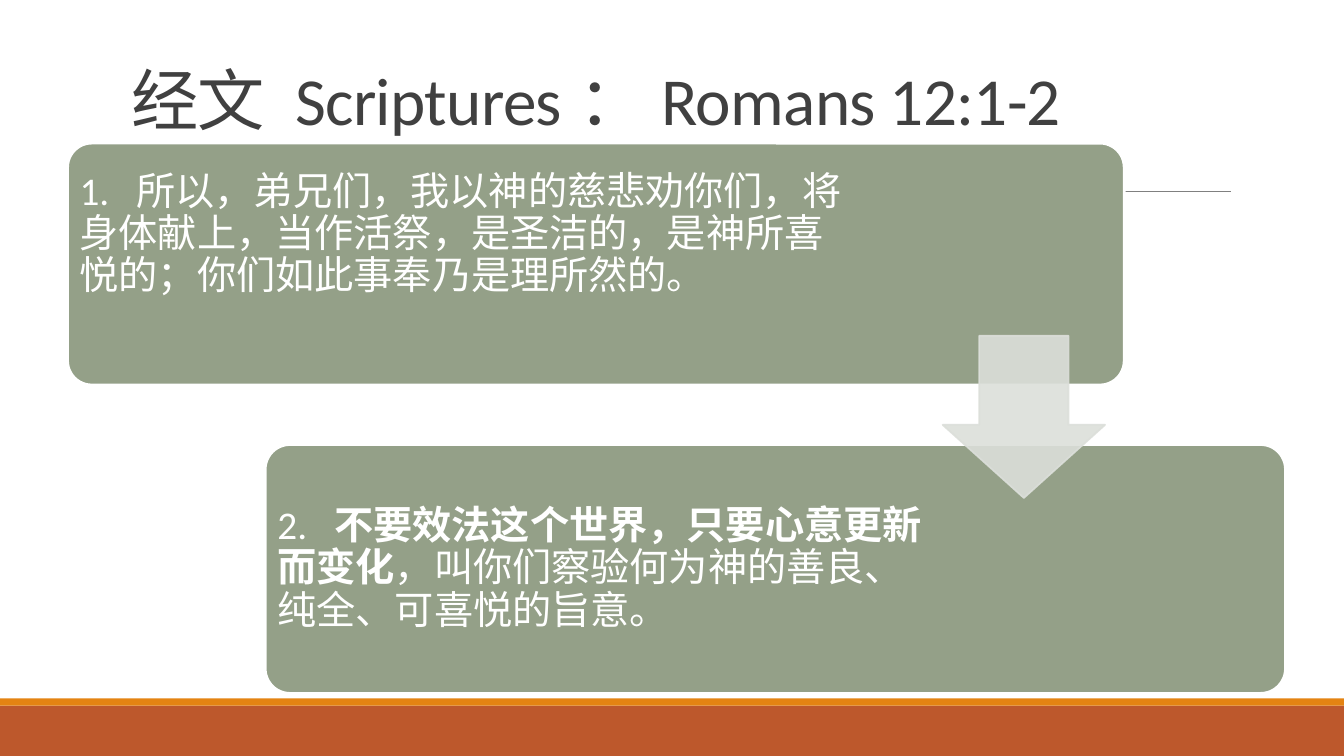
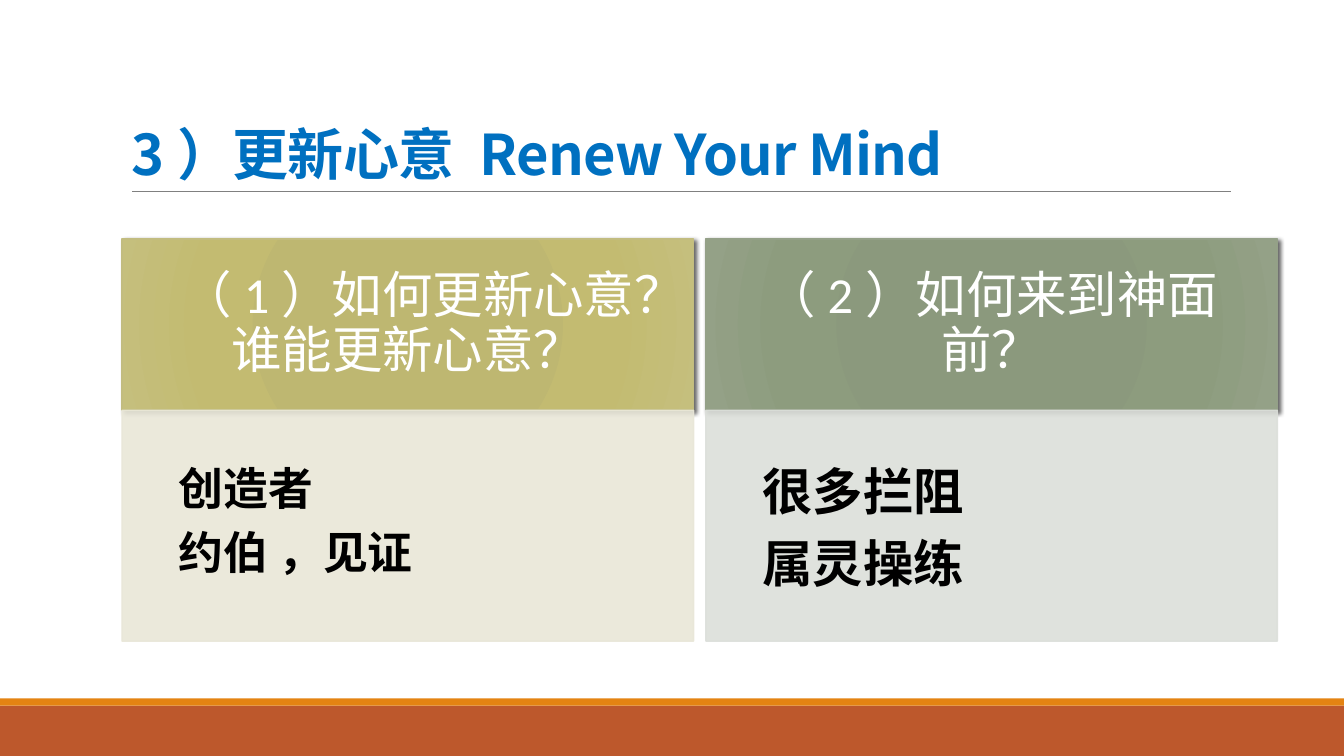
import dataclasses
import pptx
import pptx.dml.color
import pptx.enum.shapes
import pptx.enum.text
import pptx.oxml
import pptx.oxml.ns
import pptx.util

Inches = pptx.util.Inches
Pt = pptx.util.Pt
Shape = pptx.enum.shapes.MSO_SHAPE
Anchor = pptx.enum.text.MSO_ANCHOR
Align = pptx.enum.text.PP_ALIGN


@dataclasses.dataclass(frozen=True)
class Theme:
    """Colours, fonts and type sizes of the deck."""
    rust: str = "BD582C"
    orange: str = "E48312"
    rule: str = "808080"
    ink: str = "404040"
    blue: str = "0070C0"
    black: str = "000000"
    white: str = "FFFFFF"
    sage: str = "94A088"
    mist: str = "DCDFDA"
    khaki: str = "C2BC80"
    cream: str = "E9E7D8"
    gold_fade: tuple = ("BEB76E", "BEB771", "C3BB71", "C5BF7D")
    sage_fade: tuple = ("8A987B", "8B997D", "8D9C7E", "94A187")
    stops: tuple = (0, 34, 70, 100)
    font: str = "Calibri"
    heavy: str = "Noto Sans CJK SC"
    title: int = 48
    topic: int = 40
    head: int = 36
    item: int = 32
    verse: int = 28


T = Theme()


def rgb(code):
    """Turn a hex code into a colour."""
    return pptx.dml.color.RGBColor.from_string(code)


def node(text):
    """Make a drawing element from its inner markup."""
    tag, rest = text.split(" ", 1)
    names = pptx.oxml.ns.nsdecls("a")
    return pptx.oxml.parse_xml(f"<a:{tag} {names} {rest}")


def paint(shape, fill, line, width, alpha=100):
    """Give a shape a solid fill and line of one opacity."""
    if fill:
        shape.fill.solid()
        shape.fill.fore_color.rgb = rgb(fill)
    if line:
        shape.line.color.rgb = rgb(line)
        shape.line.width = Pt(width)
    else:
        shape.line.fill.background()
    if alpha < 100:
        for tint in shape._element.spPr.iter(pptx.oxml.ns.qn("a:srgbClr")):
            tint.append(node(f'alpha val="{alpha * 1000}"/>'))


def block(slide, kind, box, fill, line=None, width=1, alpha=100):
    """Add a preset shape without a shadow."""
    shape = slide.shapes.add_shape(kind, *map(Inches, box))
    paint(shape, fill, line, width, alpha)
    shape.shadow.inherit = False
    return shape


def fade(shape, tints):
    """Fill a shape with a round gradient and cast a shadow."""
    stops = "".join(
        f'<a:gs pos="{stop * 1000}"><a:srgbClr val="{tint}"/></a:gs>'
        for stop, tint in zip(T.stops, tints))
    edges = " ".join(f'{side}="100000"' for side in "ltrb")
    props = shape._element.spPr
    props.find(pptx.oxml.ns.qn("a:prstGeom")).addnext(node(
        f'gradFill rotWithShape="1"><a:gsLst>{stops}</a:gsLst>'
        f'<a:path path="circle"><a:fillToRect {edges}/></a:path></a:gradFill>'))
    props.find(pptx.oxml.ns.qn("a:effectLst")).append(node(
        f'outerShdw blurRad="{Pt(3)}" dist="{Pt(2)}" dir="2700000" rotWithShape="0">'
        f'<a:srgbClr val="{T.black}"><a:alpha val="60000"/></a:srgbClr></a:outerShdw>'))


def setup(shape, pads, anchor):
    """Set the insets, wrap and anchor of a text frame."""
    frame = shape.text_frame
    frame.word_wrap = True
    frame.auto_size = pptx.enum.text.MSO_AUTO_SIZE.NONE
    frame.vertical_anchor = anchor
    sides = ("margin_left", "margin_top", "margin_right", "margin_bottom")
    for side, pad in zip(sides, pads):
        setattr(frame, side, Inches(pad))
    return frame


def write(para, runs, size, tint, align=Align.LEFT, font=T.font, lead=0.9, after=0.35):
    """Fill a paragraph with runs of text and weight."""
    para.alignment = align
    para.line_spacing = lead
    para.space_before = Pt(0)
    para.space_after = Pt(round(size * after, 1))
    for text, bold in runs:
        run = para.add_run()
        run.text = text
        run.font.size = Pt(size)
        run.font.name = font
        run.font.bold = bold
        run.font.color.rgb = rgb(tint)


def place(shape, box):
    """Move a shape to a box."""
    shape.left, shape.top, shape.width, shape.height = map(Inches, box)


def base(deck, layout, text, high, size, tint, font, bold):
    """Start a slide with its bands, rule and title."""
    slide = deck.slides.add_slide(deck.slide_layouts.get_by_name(layout))
    block(slide, Shape.RECTANGLE, (0, 7, 13.33, 0.5), T.rust)
    block(slide, Shape.RECTANGLE, (0, 6.93, 13.33, 0.07), T.orange)
    rule = slide.shapes.add_connector(
        pptx.enum.shapes.MSO_CONNECTOR.STRAIGHT,
        *map(Inches, (1.31, 1.9, 12.21, 1.9)))
    rule.line.color.rgb = rgb(T.rule)
    rule.line.width = Pt(0.5)
    rule._element.spPr.append(node("effectLst />"))
    title = slide.shapes.title
    place(title, (1.2, 0.31, 11, high))
    para = setup(title, (0.1, 0.05, 0.1, 0.05), Anchor.BOTTOM).paragraphs[0]
    write(para, [(text, bold)], size, tint, font=font, lead=0.85, after=0)
    para.runs[0]._r.get_or_add_rPr().set("spc", "-50")
    return slide


def verse(slide, box, runs, right, foot):
    """Add a rounded verse panel with room at its right and foot."""
    panel = block(slide, Shape.ROUNDED_RECTANGLE, box, T.sage, T.white, 2)
    panel.adjustments[0] = 0.1
    frame = setup(panel, (0.05, 0.05, right, foot), Anchor.MIDDLE)
    write(frame.paragraphs[0], runs, T.verse, T.white)


def card(slide, body, box, head, items, size, look):
    """Add a card with a shaded head over a list."""
    left, top, width, high = box
    tints, edge, fill = look
    cap = 1.7
    bar = block(slide, Shape.RECTANGLE, (left, top, width, cap), None, edge)
    fade(bar, tints)
    frame = setup(bar, (0.45, 0.1, 0.45, 0.1), Anchor.MIDDLE)
    write(frame.paragraphs[0], [(head, False)], T.head, T.white, Align.CENTER)
    place(body, (left, top + cap, width, high - cap))
    paint(body, fill, fill, 1, 90)
    bar._element.addnext(body._element)
    frame = setup(body, (0.56,) * 4, Anchor.TOP)
    for rank, item in enumerate(items):
        para = frame.add_paragraph() if rank else frame.paragraphs[0]
        write(para, [(item, True)], size, T.black)
        props = para._p.get_or_add_pPr()
        props.set("marL", "0")
        props.set("indent", "0")
        props.append(node("buNone />"))


def scripture(deck):
    """Build the slide of two verses."""
    slide = base(deck, "Title Only", "经文 Scriptures：Romans 12:1-2",
                 1.12, T.title, T.ink, T.font, False)
    verse(slide, (0.67, 1.42, 10.48, 2.4), [
        ("1.  所以，弟兄们，我以神的慈悲劝你们，将身体献上，当作活祭，"
         "是圣洁的，是神所喜悦的；你们如此事奉乃是理所然的。", False),
    ], 2.55, 0.63)
    verse(slide, (2.63, 4.41, 10.12, 2.47), [
        ("2.  ", False),
        ("不要效法这个世界，只要心意更新而变化", True),
        ("，叫你们察验何为神的善良、纯全、可喜悦的旨意。", False),
    ], 3.45, 0.05)
    arrow = block(slide, Shape.DOWN_ARROW, (9.35, 3.33, 1.61, 1.61),
                  T.mist, T.mist, 1.25, 90)
    arrow.adjustments[0] = 0.55
    arrow.adjustments[1] = 0.45


def renew(deck):
    """Build the slide of two question cards."""
    slide = base(deck, "Two Content", "3）更新心意 Renew Your Mind",
                 1.59, T.topic, T.blue, T.heavy, True)
    cards = (
        ("（1）如何更新心意？谁能更新心意？", ("创造者", "约伯 ，见证"), T.item,
         (T.gold_fade, T.khaki, T.cream)),
        ("（2）如何来到神面前？", ("很多拦阻", "属灵操练"), T.head,
         (T.sage_fade, T.sage, T.mist)),
    )
    width, gap = 5.67, 0.12
    for rank, parts in enumerate(cards):
        box = (1.21 + rank * (width + gap), 2.37, width, 3.99)
        card(slide, slide.placeholders[rank + 1], box, *parts)


def main():
    """Build and save the deck."""
    deck = pptx.Presentation()
    deck.slide_width = Inches(13.33)
    deck.slide_height = Inches(7.5)
    scripture(deck)
    renew(deck)
    deck.save("out.pptx")


if __name__ == "__main__":
    main()
